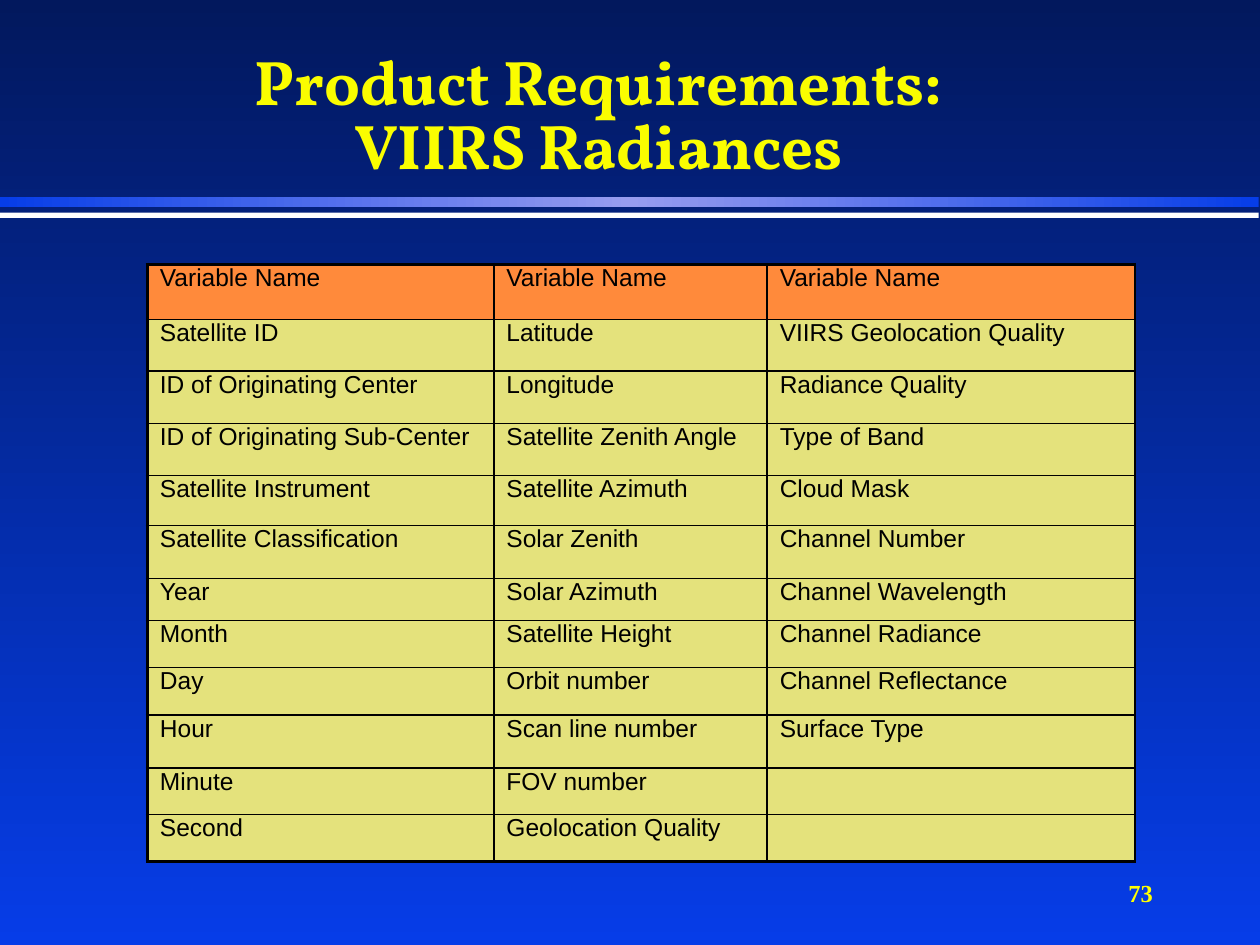
from copy import deepcopy

from pptx import Presentation
from pptx.dml.color import RGBColor
from pptx.enum.shapes import MSO_SHAPE as Shape
from pptx.enum.text import MSO_ANCHOR as Anchor, MSO_AUTO_SIZE as AutoSize, PP_ALIGN as Align
from pptx.oxml.ns import qn
from pptx.oxml.xmlchemy import OxmlElement as make_element
from pptx.util import Pt

NAVY = RGBColor(0x02, 0x18, 0x5D)
BLUE = RGBColor(0x06, 0x3D, 0xE8)
LAVENDER = RGBColor(0x97, 0x9C, 0xEF)
WHITE = RGBColor(0xFF, 0xFF, 0xFF)
BLACK = RGBColor(0x00, 0x00, 0x00)
YELLOW = RGBColor(0xFF, 0xFF, 0x00)
TITLE_YELLOW = RGBColor(0xFA, 0xFD, 0x00)
ORANGE = RGBColor(0xFF, 0x8A, 0x3B)
KHAKI = RGBColor(0xE4, 0xE2, 0x7C)

THIN, THICK = Pt(1), Pt(2.25)
COLUMN_WIDTHS = (198, 156.2, 210.2)
ROW_HEIGHTS = (31.4, 29.3, 30.2, 29.6, 28.7, 30.2, 24.2, 26.6, 27.4, 30.1, 26.8, 26.6)
VARIABLES = (
    ("Variable Name", "Variable Name", "Variable Name"),
    ("Satellite ID", "Latitude", "VIIRS Geolocation Quality"),
    ("ID of Originating Center", "Longitude", "Radiance Quality"),
    ("ID of Originating Sub-Center", "Satellite Zenith Angle", "Type of Band"),
    ("Satellite Instrument", "Satellite Azimuth", "Cloud Mask"),
    ("Satellite Classification", "Solar Zenith", "Channel Number"),
    ("Year", "Solar Azimuth", "Channel Wavelength"),
    ("Month", "Satellite Height", "Channel Radiance"),
    ("Day", "Orbit number", "Channel Reflectance"),
    ("Hour", "Scan line number", "Surface Type"),
    ("Minute", "FOV number", ""),
    ("Second", "Geolocation Quality", ""),
)


def paint_gradient(fill, element, colors, angle):
    """Fill with evenly spaced gradient colours."""
    fill.gradient()
    fill.gradient_angle = angle
    stop_list = next(element.iter(qn("a:gsLst")))
    for _ in colors[2:]:
        stop_list.append(deepcopy(stop_list[0]))
    for index, (stop, color) in enumerate(zip(fill.gradient_stops, colors)):
        stop.position = index / (len(colors) - 1)
        stop.color.rgb = color


def format_text(para, name, size, color, bold=False):
    """Format every run of a paragraph."""
    for span in para.runs:
        font = span.font
        font.name, font.size, font.bold = name, Pt(size), bold
        font.color.rgb = color


def add_band(page, top, height):
    """Add a full-width band without outline or shadow."""
    band = page.shapes.add_shape(Shape.RECTANGLE, Pt(0), Pt(top), Pt(719.3), Pt(height))
    band.shadow.inherit = False
    band.line.fill.background()
    return band


def add_title(page):
    """Place and format the title."""
    title = page.shapes.title
    title.left, title.top, title.width, title.height = Pt(102), Pt(18), Pt(480), Pt(90)
    frame = title.text_frame
    frame.text = "Product Requirements:\vVIIRS Radiances"
    frame.word_wrap = True
    frame.auto_size = AutoSize.NONE
    frame.vertical_anchor = Anchor.BOTTOM
    para = frame.paragraphs[0]
    para.alignment = Align.CENTER
    para.line_spacing = 0.85
    format_text(para, "Vollkorn", 36, TITLE_YELLOW, True)


def add_page_number(page):
    """Add the page number at the lower right."""
    box = page.shapes.add_textbox(Pt(516), Pt(492), Pt(150), Pt(36))
    frame = box.text_frame
    frame.text = "73"
    frame.vertical_anchor = Anchor.MIDDLE
    para = frame.paragraphs[0]
    para.alignment = Align.RIGHT
    format_text(para, "Times New Roman", 14, YELLOW, True)


def add_border(cell, side, width):
    """Add one solid black cell border."""
    line = make_element(f"a:{side}")
    line.set("w", str(width))
    solid = make_element("a:solidFill")
    color = make_element("a:srgbClr")
    color.set("val", str(BLACK))
    solid.append(color)
    line.append(solid)
    cell.fill.solid()
    properties = cell._tc.tcPr
    properties.insert(len(properties) - 1, line)


def fill_cell(cell, text, color, borders):
    """Set the text, borders and fill of a cell."""
    cell.text = text
    cell.margin_top = cell.margin_bottom = 0
    cell.margin_left = cell.margin_right = Pt(7.2)
    format_text(cell.text_frame.paragraphs[0], "Arial", 14, BLACK)
    for side, width in borders.items():
        add_border(cell, side, width)
    cell.fill.fore_color.rgb = color


def add_variable_table(page):
    """Add the table of variable names."""
    row_count, column_count = len(ROW_HEIGHTS), len(COLUMN_WIDTHS)
    table = page.shapes.add_table(
        row_count, column_count, Pt(84.2), Pt(151.2), Pt(sum(COLUMN_WIDTHS)), Pt(sum(ROW_HEIGHTS))
    ).table
    table.first_row = table.horz_banding = False
    for column, width in zip(table.columns, COLUMN_WIDTHS):
        column.width = Pt(width)
    for row, (height, names) in enumerate(zip(ROW_HEIGHTS, VARIABLES)):
        table.rows[row].height = Pt(height)
        for column, name in enumerate(names):
            borders = {
                "lnL": THICK if column == 0 else THIN,
                "lnR": THIN,
                "lnT": THICK if row == 0 else THIN,
                "lnB": THICK if row == row_count - 1 else THIN,
            }
            fill_cell(table.cell(row, column), name, KHAKI if row else ORANGE, borders)


def main():
    """Build and save the slide."""
    deck = Presentation()
    deck.slide_width, deck.slide_height = Pt(720), Pt(540)
    page = deck.slides.add_slide(deck.slide_layouts[5])
    paint_gradient(page.background.fill, page.element, (NAVY, BLUE), 270)
    band = add_band(page, 112.5, 5.8)
    paint_gradient(band.fill, band.element, (BLUE, LAVENDER, BLUE), 0)
    rule = add_band(page, 121.5, 3)
    rule.fill.solid()
    rule.fill.fore_color.rgb = WHITE
    add_page_number(page)
    add_title(page)
    add_variable_table(page)
    deck.save("out.pptx")


if __name__ == "__main__":
    main()
